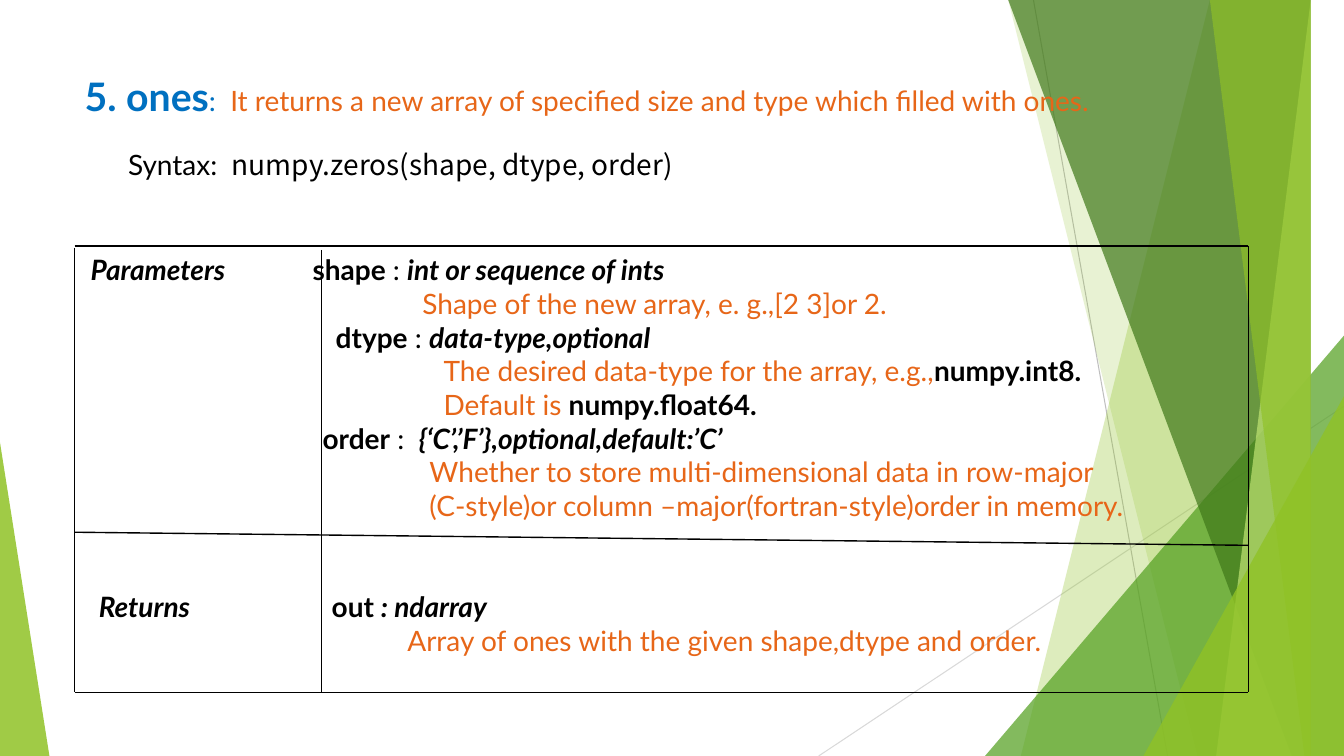
from pptx import Presentation
from pptx.dml.color import RGBColor
from pptx.enum.shapes import MSO_CONNECTOR, MSO_SHAPE
from pptx.enum.text import MSO_ANCHOR, MSO_AUTO_SIZE, PP_ALIGN
from pptx.oxml.ns import qn
from pptx.util import Inches, Pt
from lxml.etree import SubElement

COLORS = {
    "black": "000000", "blue": "0070C0", "orange": "E76618",
    "gray": "BFBFBF", "pale_gray": "D9D9D9",
    "lime": "90C226", "green": "54A021", "forest": "3F7819", "mint": "C0E474",
}
WIDTH, HEIGHT = 13.33, 7.5
BOLD = {"bold": True}
BOLD_ITALIC = {"bold": True, "italic": True}
ORANGE = {"color": "orange"}


def rgb(name):
    return RGBColor.from_string(COLORS[name])


def add_span(para, text, size=20, font="Lato", color="black", bold=False, italic=False):
    span = para.add_run()
    span.text = text
    span.font.size = Pt(size)
    span.font.name = font
    span.font.color.rgb = rgb(color)
    span.font.bold = bold
    span.font.italic = italic


def fill_frame(frame, lines):
    frame.word_wrap = True
    frame.auto_size = MSO_AUTO_SIZE.NONE
    frame.vertical_anchor = MSO_ANCHOR.TOP
    frame.margin_left = frame.margin_right = frame.margin_top = frame.margin_bottom = 0
    for index, (indent, spans) in enumerate(lines):
        para = frame.paragraphs[0] if index == 0 else frame.add_paragraph()
        para.alignment = PP_ALIGN.LEFT
        para._p.get_or_add_pPr().set("marL", str(Inches(indent)))
        for text, style in spans:
            add_span(para, text, **style)


def add_text(page, left, top, width, height, lines):
    box = page.shapes.add_textbox(Inches(left), Inches(top), Inches(width), Inches(height))
    fill_frame(box.text_frame, lines)


def add_line(shapes, start, end, color="black", weight=1):
    line = shapes.add_connector(MSO_CONNECTOR.STRAIGHT, *map(Inches, (*start, *end)))
    line.line.color.rgb = rgb(color)
    line.line.width = Pt(weight)
    SubElement(line.element.spPr, qn("a:effectLst"))


def paint(shape, color, opacity):
    shape.shadow.inherit = False
    shape.fill.solid()
    shape.fill.fore_color.rgb = rgb(color)
    shape.line.fill.background()
    srgb = shape.element.spPr.find(qn("a:solidFill")).find(qn("a:srgbClr"))
    SubElement(srgb, qn("a:alpha")).set("val", str(opacity * 1000))


def add_band(shapes, top_x, bottom_x, color, opacity):
    builder = shapes.build_freeform(top_x, -0.01, scale=Inches(1))
    builder.add_line_segments([(WIDTH, -0.01), (WIDTH, HEIGHT), (bottom_x, HEIGHT)], close=True)
    paint(builder.convert_to_shape(), color, opacity)


def add_wedge(shapes, left, top, right, apex, color, opacity):
    wedge = shapes.add_shape(MSO_SHAPE.ISOSCELES_TRIANGLE, Inches(left), Inches(top),
                             Inches(right - left), Inches(HEIGHT - top))
    wedge.adjustments[0] = apex
    paint(wedge, color, opacity)


def add_backdrop(page):
    shapes = page.shapes.add_group_shape().shapes
    add_line(shapes, (10.25, 0), (11.58, HEIGHT), "gray", 0.75)
    add_line(shapes, (WIDTH, 4.03), (8.12, HEIGHT), "pale_gray", 0.75)
    add_band(shapes, 12.28, 10.04, "lime", 30)
    add_band(shapes, 10.5, 11.83, "lime", 20)
    add_wedge(shapes, 9.77, 3.33, WIDTH, 1, "green", 72)
    add_band(shapes, 10.21, 12.91, "forest", 70)
    add_band(shapes, 13.03, 11.92, "mint", 70)
    add_band(shapes, 11.96, 13.18, "lime", 65)
    add_wedge(shapes, 11.34, 3.93, WIDTH, 1, "lime", 80)
    add_wedge(shapes, 0, 4.39, 0.49, 0, "lime", 85)


def add_heading(page, left, top, width):
    title = page.shapes.title
    title.left, title.top = Inches(left), Inches(top)
    title.width, title.height = Inches(width), Inches(0.5)
    fill_frame(title.text_frame, [(0, [
        ("5. ones", {"size": 28, "color": "blue", "bold": True}),
        (":  ", {"color": "blue"}),
        ("It returns a new array of specified size and type which filled with ones.", ORANGE),
    ])])
    title.element.getparent().append(title.element)
    add_text(page, left + 0.43, top + 0.74, 8, 0.45, [(0, [
        ("Syntax:  ", {}),
        ("numpy.zeros(shape, dtype, order)", {"font": "Noto Sans CJK SC"}),
    ])])


def add_reference(page, left, top, width, height):
    right, bottom, divider = left + width, top + height, left + 2.45
    add_text(page, left + 0.16, top + 0.07, 2, 0.4, [(0, [("Parameters", BOLD_ITALIC)])])
    add_text(page, left + 2.36, top + 0.07, 9.2, 2.7, [
        (0, [("shape", BOLD), (" : ", {}), ("int or sequence of ints", BOLD_ITALIC)]),
        (1.09, [("Shape of the new array, e. g.,[2 3]or 2.", ORANGE)]),
        (0.23, [("dtype", BOLD), (" : ", {}), ("data-type,optional", BOLD_ITALIC)]),
        (1.3, [("The desired data-type for the array, e.g.,", ORANGE), ("numpy.int8.", BOLD)]),
        (1.3, [("Default is ", ORANGE), ("numpy.float64.", BOLD)]),
        (0.1, [("order", BOLD), (" :  ", {}), ("{‘C’,’F’},optional,default:’C’", BOLD_ITALIC)]),
        (1.16, [("Whether to store multi-dimensional data in row-major", ORANGE)]),
        (1.16, [("(C-style)or column –major(fortran-style)order in memory.", ORANGE)]),
    ])
    add_text(page, left + 0.24, top + 3.41, 2, 0.4, [(0, [("Returns", BOLD_ITALIC)])])
    add_text(page, left + 2.55, top + 3.41, 8.9, 0.7, [
        (0, [("out ", BOLD), (": ndarray", BOLD_ITALIC)]),
        (0.75, [("Array of ones with the given shape,dtype and order.", ORANGE)]),
    ])
    for x, gap in ((left, 0.02), (divider, 0.04), (right, 0)):
        add_line(page.shapes, (x, top + gap), (x, bottom))
    for start_y, end_y in ((top + 2.84, top + 2.97), (top, top), (bottom, bottom)):
        add_line(page.shapes, (left, start_y), (right, end_y))


def main():
    deck = Presentation()
    deck.slide_width, deck.slide_height = Inches(WIDTH), Inches(HEIGHT)
    page = deck.slides.add_slide(deck.slide_layouts[5])
    add_backdrop(page)
    add_heading(page, 0.84, 0.72, 12.49)
    add_reference(page, 0.74, 2.44, 11.64, 4.43)
    deck.save("out.pptx")


if __name__ == "__main__":
    main()
